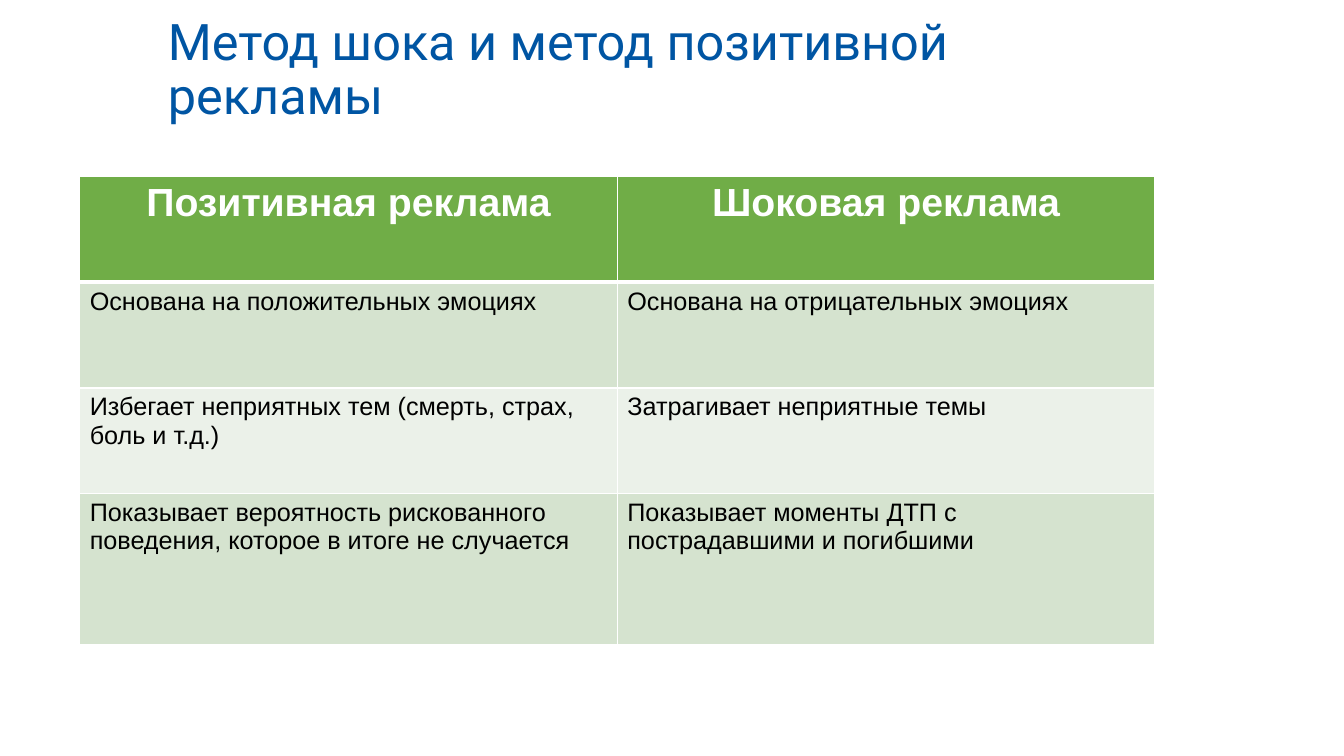
from lxml import etree
from pptx import Presentation
from pptx import util as u
from pptx.dml.color import RGBColor
from pptx.enum import text
from pptx.oxml.ns import qn

COLORS = {
    "title": "0055A3",
    "header": "70AD47",
    "odd": "D5E3CF",
    "even": "EBF1E9",
    "white": "FFFFFF",
    "black": "000000",
}

ROWS = [
    ("Позитивная реклама", "Шоковая реклама"),
    ("Основана на положительных эмоциях", "Основана на отрицательных эмоциях"),
    ("Избегает неприятных тем (смерть, страх, боль и т.д.)",
     "Затрагивает неприятные темы"),
    ("Показывает вероятность рискованного поведения, которое в итоге не случается",
     "Показывает моменты ДТП с пострадавшими и погибшими"),
]


def write(tf, content, size=18, font="Arial", color="black", bold=False,
          align=text.PP_ALIGN.LEFT, spacing=None):
    p = tf.paragraphs[0]
    p.alignment = align
    if spacing:
        p.line_spacing = spacing
    r = p.add_run()
    r.text = content
    r.font.size = u.Pt(size)
    r.font.name = font
    r.font.bold = bold
    r.font.color.rgb = RGBColor.from_string(COLORS[color])


class Deck:
    """Builds a slide from elements placed in percent of its size."""

    def __init__(self, width=13.33, height=7.5):
        self.prs = Presentation()
        self.prs.slide_width = u.Inches(width)
        self.prs.slide_height = u.Inches(height)
        self.s = self.prs.slides.add_slide(self.prs.slide_layouts[6])

    def x(self, percent):
        return round(self.prs.slide_width * percent / 100)

    def y(self, percent):
        return round(self.prs.slide_height * percent / 100)

    def title(self, content, left, top, width, height):
        sp = self.s.shapes.add_textbox(
            self.x(left), self.y(top), self.x(width), self.y(height))
        tf = sp.text_frame
        tf.word_wrap = True
        tf.vertical_anchor = text.MSO_ANCHOR.MIDDLE
        tf.margin_left = tf.margin_right = tf.margin_top = tf.margin_bottom = 0
        write(tf, content, size=36, font="Roboto", color="title", spacing=0.9)

    def borders(self, cell, **widths):
        tcPr = cell._tc.get_or_add_tcPr()
        for side in "LRTB":
            ln = etree.SubElement(tcPr, qn(f"a:ln{side}"),
                                  w=str(u.Pt(widths.get(side, 1))))
            fill = etree.SubElement(ln, qn("a:solidFill"))
            etree.SubElement(fill, qn("a:srgbClr"), val=COLORS["white"])

    def table(self, rows, left, top, col_width, row_heights):
        cols = len(rows[0])
        tbl = self.s.shapes.add_table(
            len(rows), cols, self.x(left), self.y(top),
            self.x(col_width * cols), self.y(sum(row_heights))).table
        for col in tbl.columns:
            col.width = self.x(col_width)
        for i, (row, height) in enumerate(zip(rows, row_heights)):
            tbl.rows[i].height = self.y(height)
            for j, content in enumerate(row):
                cell = tbl.cell(i, j)
                self.borders(cell, T=3 if i == 1 else 1, B=3 if i == 0 else 1)
                shade = "header" if i == 0 else "odd" if i % 2 else "even"
                cell.fill.solid()
                cell.fill.fore_color.rgb = RGBColor.from_string(COLORS[shade])
                if i == 0:
                    write(cell.text_frame, content, size=28, color="white",
                          bold=True, align=text.PP_ALIGN.CENTER)
                else:
                    write(cell.text_frame, content)

    def save(self):
        self.prs.save("out.pptx")


def main():
    deck = Deck()
    deck.title("Метод шока и метод позитивной рекламы", 12.5, 4.27, 75, 10.27)
    deck.table(ROWS, 5.93, 23.33, 40, [14, 14, 14, 20])
    deck.save()


if __name__ == "__main__":
    main()
